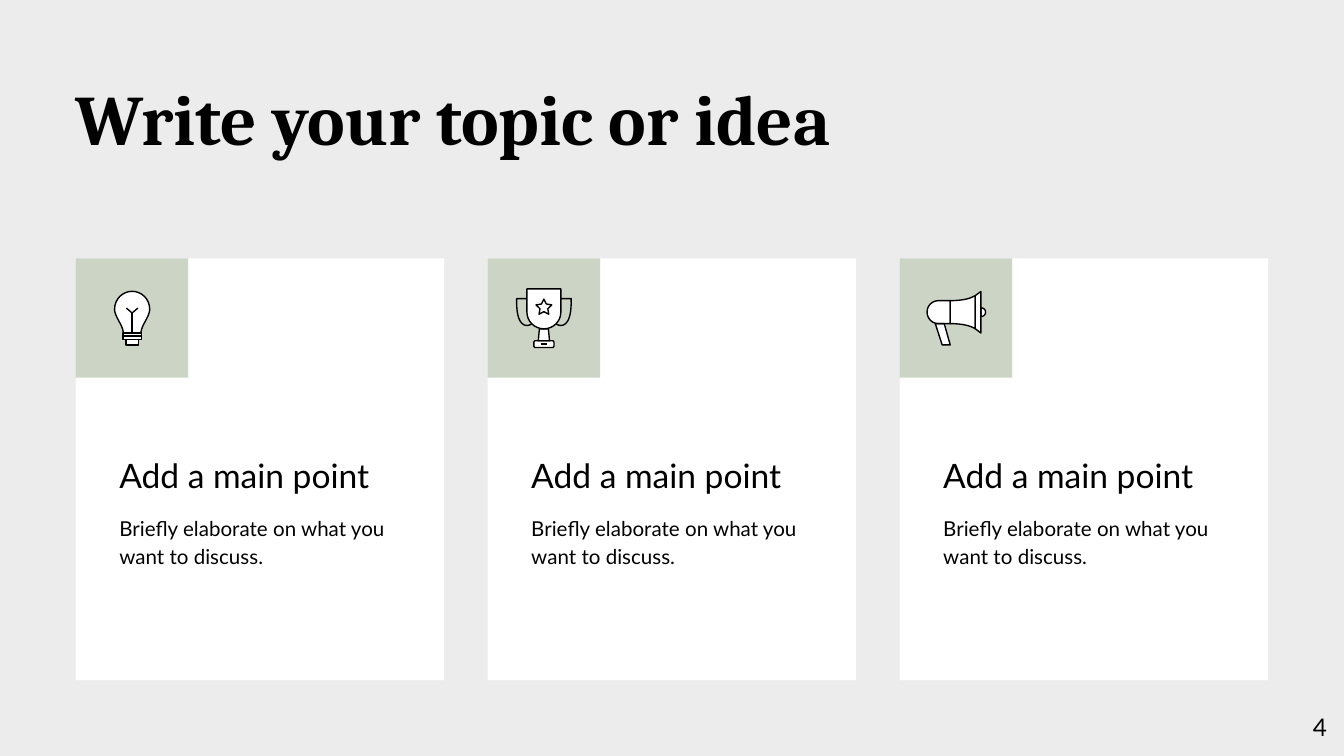
from pptx import Presentation
from pptx.dml.color import RGBColor
from pptx.enum.shapes import MSO_SHAPE as Preset
from pptx.enum.text import MSO_ANCHOR as Anchor, MSO_AUTO_SIZE as AutoSize, PP_ALIGN as Align
from pptx.util import Pt

BLACK, WHITE, GREY, SAGE = "000000", "FFFFFF", "EDECED", "CBD4C5"
HEADLINE = "Write your topic or idea"
PAGE_NUMBER = "4"

BULB = {
    "panels": [
        [(20.9, 27.2), (20.9, 22, 25.1, 17.7, 30.3, 17.7), (35.5, 17.7, 39.7, 22, 39.7, 27.2),
         (39.7, 29.5, 38.5, 31.5, 37.4, 33.7), (36, 36, 35.2, 38, 35, 40), (25.6, 40),
         (25.4, 38, 24.6, 36, 23.2, 33.7), (22.1, 31.5, 20.9, 29.5, 20.9, 27.2)],
        [(25.4, 40), (35.2, 40), (35.2, 43.4), (25.4, 43.4)],
        [(27, 43.4), (33.6, 43.4), (33.6, 46.4), (27, 46.4)],
    ],
    "details": [
        [(25.4, 41.6), (35.2, 41.6)],
        [(27.2, 26.7), (30.3, 29.3), (33.4, 26.7)],
        [(30.3, 29.3), (30.3, 40)],
    ],
}
TROPHY = {
    "panels": [
        [(27.8, 37.8), (27.2, 44.2), (33.2, 44.2), (32.6, 37.8)],
        [(21.1, 16.4), (39.3, 16.4), (39.3, 28.8), (39.3, 33.8, 35.2, 37.8, 30.2, 37.8),
         (25.2, 37.8, 21.1, 33.8, 21.1, 28.8)],
        [(25.4, 44.2), (35, 44.2), (35.6, 44.8), (35.6, 47.2), (35, 47.8),
         (25.4, 47.8), (24.8, 47.2), (24.8, 44.8)],
    ],
    "details": [
        [(21.1, 21.6), (15.6, 21.6), (15.4, 29, 16.5, 34, 19.4, 35.6), (21, 36.3, 22.3, 36, 23.6, 35.2)],
        [(39.3, 21.6), (44.8, 21.6), (45, 29, 43.9, 34, 41, 35.6), (39.4, 36.3, 38.1, 36, 36.8, 35.2)],
        [(28.4, 46), (32, 46)],
        [(30.2, 21.9), (31.5, 24.5), (34.4, 25), (32.3, 27), (32.8, 30), (30.2, 28.6),
         (27.6, 30), (28.1, 27), (26, 25), (28.9, 24.5), (30.2, 21.9)],
    ],
}
MEGAPHONE = {
    "panels": [
        [(19.2, 35), (22.9, 46.4), (27.2, 46.4), (24, 35)],
        [(27.2, 22.7), (20.9, 22.7), (17.5, 22.7, 14.8, 25.4, 14.8, 28.8),
         (14.8, 32.2, 17.5, 35, 20.9, 35), (27.2, 35)],
        [(27.2, 22.7), (34, 22.7, 38, 21.5, 40.6, 20), (40.6, 37.7), (38, 36.2, 34, 35, 27.2, 35)],
        [(40.6, 20), (43.6, 17.8), (43.6, 40), (40.6, 37.7)],
        [(43.6, 26.5), (47, 26.5, 47, 31.2, 43.6, 31.2)],
    ],
    "details": [],
}
POINT, DETAIL = "Add a main point", "Briefly elaborate on what you want to discuss."
CARDS = [(BULB, POINT, DETAIL), (TROPHY, POINT, DETAIL), (MEGAPHONE, POINT, DETAIL)]

MARGIN, CARD_TOP, CARD_W, CARD_H, PITCH = 40.5, 138.4, 197.5, 226, 220.7
TILE_W, TILE_H, INDENT, TEXT_W = 60.3, 64, 23.4, 151
CURVE_STEPS = 8


def rgb(hex_color):
    return RGBColor.from_string(hex_color)


def paint(shape, fill=None, line=None):
    shape.shadow.inherit = False
    if fill:
        shape.fill.solid()
        shape.fill.fore_color.rgb = rgb(fill)
    else:
        shape.fill.background()
    if line:
        shape.line.color.rgb = rgb(line)
        shape.line.width = Pt(0.75)
    else:
        shape.line.fill.background()


def add_block(slide, left, top, width, height, color):
    block = slide.shapes.add_shape(Preset.RECTANGLE, Pt(left), Pt(top), Pt(width), Pt(height))
    paint(block, fill=color)


def add_text(slide, box, words, size, font="Lato", bold=False, spacing=None,
             align=Align.LEFT, anchor=Anchor.TOP, fit=AutoSize.SHAPE_TO_FIT_TEXT):
    frame = slide.shapes.add_textbox(*map(Pt, box)).text_frame
    frame.word_wrap = True
    frame.auto_size = fit
    frame.vertical_anchor = anchor
    frame.margin_left = frame.margin_right = frame.margin_top = frame.margin_bottom = 0
    paragraph = frame.paragraphs[0]
    paragraph.alignment = align
    paragraph.line_spacing = spacing
    run = paragraph.add_run()
    run.text = words
    run.font.name, run.font.size, run.font.bold = font, Pt(size), bold
    run.font.color.rgb = rgb(BLACK)


def trace(steps):
    points = [steps[0]]
    for step in steps[1:]:
        if len(step) == 2:
            points.append(step)
            continue
        controls = [points[-1], step[:2], step[2:4], step[4:]]
        for i in range(1, CURVE_STEPS + 1):
            t = i / CURVE_STEPS
            weights = ((1 - t) ** 3, 3 * t * (1 - t) ** 2, 3 * t * t * (1 - t), t ** 3)
            points.append(tuple(sum(w * c[axis] for w, c in zip(weights, controls)) for axis in (0, 1)))
    return points


def add_outlines(slide, panels, details, left, top):
    builder = None
    for number, steps in enumerate(panels + details):
        start, *rest = [(Pt(left + x), Pt(top + y)) for x, y in trace(steps)]
        if builder is None:
            builder = slide.shapes.build_freeform(*start)
        else:
            builder.move_to(*start)
        builder.add_line_segments(rest, close=number < len(panels))
    return builder.convert_to_shape()


def add_icon(slide, icon, left, top):
    paint(add_outlines(slide, icon["panels"], [], left, top), fill=WHITE)
    paint(add_outlines(slide, icon["panels"], icon["details"], left, top), line=BLACK)


def main():
    deck = Presentation()
    deck.slide_width, deck.slide_height = Pt(720), Pt(405)
    slide = deck.slides.add_slide(deck.slide_layouts[6])
    slide.background.fill.solid()
    slide.background.fill.fore_color.rgb = rgb(GREY)

    add_text(slide, (MARGIN, 40, 520, 46), HEADLINE, 38, font="Cambria", bold=True)
    for index, (icon, point, detail) in enumerate(CARDS):
        left = MARGIN + index * PITCH
        add_block(slide, left, CARD_TOP, CARD_W, CARD_H, WHITE)
        add_block(slide, left, CARD_TOP, TILE_W, TILE_H, SAGE)
        add_icon(slide, icon, left, CARD_TOP)
        add_text(slide, (left + INDENT, 240.5, TEXT_W, 21.6), point, 18, spacing=1.15)
        add_text(slide, (left + INDENT, 274.3, TEXT_W, 28.8), detail, 11, spacing=1.15)
    add_text(slide, (667.7, 373.7, 43.2, 31), PAGE_NUMBER, 13,
             align=Align.RIGHT, anchor=Anchor.MIDDLE, fit=AutoSize.NONE)
    deck.save("out.pptx")


if __name__ == "__main__":
    main()
